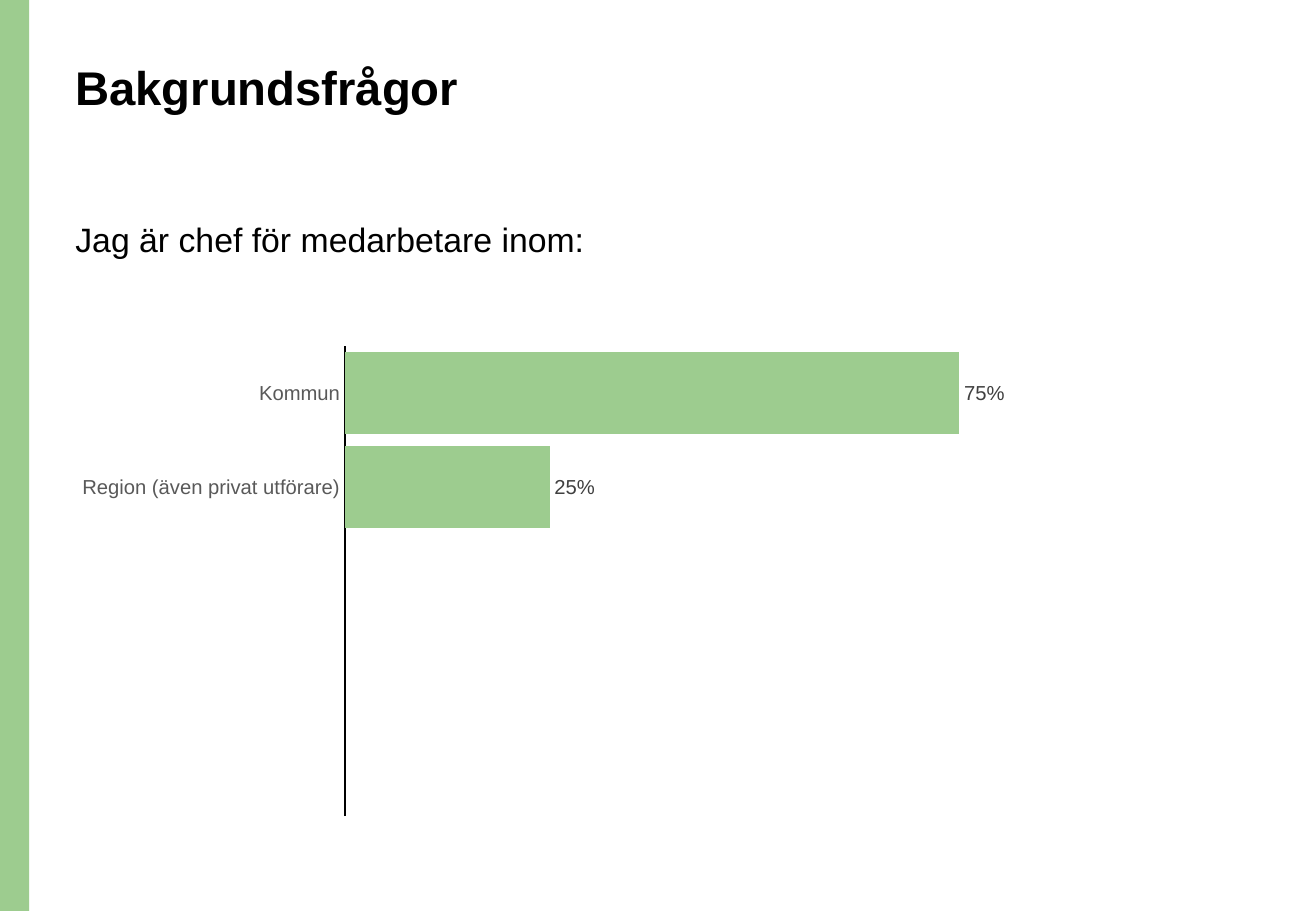
from lxml.etree import SubElement
from pptx import Presentation
from pptx.chart.data import CategoryChartData
from pptx.dml.color import RGBColor
from pptx.enum.chart import XL_CHART_TYPE, XL_LABEL_POSITION, XL_TICK_MARK
from pptx.enum.shapes import MSO_SHAPE
from pptx.enum.text import MSO_ANCHOR, MSO_AUTO_SIZE, PP_ALIGN
from pptx.oxml.ns import qn
from pptx.util import Pt

PX = 9144
GREEN = RGBColor(0x9D, 0xCC, 0x8F)
BLACK = RGBColor(0, 0, 0)
GREY = RGBColor(0x59, 0x59, 0x59)
DARK = RGBColor(0x40, 0x40, 0x40)


def scale(*box):
    """Turn px lengths into EMU."""
    return [side * PX for side in box]


def apply(item, form):
    """Set each format value on an item."""
    for name, value in form.items():
        setattr(item, name, value)


def style(font, size, color, bold=False):
    """Set the face, size and colour of a font."""
    apply(font, {"name": "Arial", "size": Pt(size), "bold": bold})
    font.color.rgb = color


def add_band(slide, box):
    """Draw the green band at the edge."""
    band = slide.shapes.add_shape(MSO_SHAPE.RECTANGLE, *scale(*box))
    band.shadow.inherit = False
    band.fill.solid()
    band.fill.fore_color.rgb = GREEN
    band.line.fill.background()


def fill_holder(holder, box, text, size, bold=False):
    """Place a text holder and write its plain line of text."""
    apply(holder, dict(zip(("left", "top", "width", "height"), scale(*box))))
    frame = holder.text_frame
    frame.text = text
    apply(frame, {"word_wrap": True, "auto_size": MSO_AUTO_SIZE.NONE,
                  "vertical_anchor": MSO_ANCHOR.TOP})
    line = frame.paragraphs[0]
    apply(line, {"alignment": PP_ALIGN.LEFT, "line_spacing": 0.9,
                 "space_before": Pt(0)})
    props = line._p.get_or_add_pPr()
    for name in ("marL", "indent"):
        props.set(name, "0")
    SubElement(props, qn("a:buNone"))
    style(line.runs[0].font, size, BLACK, bold)


def add_bars(slide, box, names, shares):
    """Add the bar chart of shares."""
    data = CategoryChartData(number_format="0%")
    data.categories = names
    data.add_series("Series 1", shares)
    chart = slide.shapes.add_chart(
        XL_CHART_TYPE.BAR_CLUSTERED, *scale(*box), data).chart
    apply(chart, {"has_legend": False, "has_title": False})
    style(chart.font, 10, BLACK)

    axis = chart.category_axis
    apply(axis, {"reverse_order": True, "has_major_gridlines": False,
                 "major_tick_mark": XL_TICK_MARK.NONE,
                 "minor_tick_mark": XL_TICK_MARK.NONE})
    style(axis.tick_labels.font, 12, GREY)
    axis.format.line.color.rgb = BLACK
    axis.format.line.width = Pt(0.75)
    apply(chart.value_axis, {"visible": False, "has_major_gridlines": False,
                             "minimum_scale": 0, "maximum_scale": 0.8})

    plot = chart.plots[0]
    apply(plot, {"gap_width": 15, "vary_by_categories": False})
    bars = plot.series[0]
    bars.format.fill.solid()
    bars.format.fill.fore_color.rgb = GREEN
    labels = bars.data_labels
    apply(labels, {"show_value": True, "number_format": "0%",
                   "number_format_is_linked": False,
                   "position": XL_LABEL_POSITION.OUTSIDE_END})
    style(labels.font, 12, DARK)


def main():
    """Build and save the slide."""
    deck = Presentation()
    apply(deck, {"slide_width": 1083 * PX, "slide_height": 750 * PX})
    slide = deck.slides.add_slide(deck.slide_layouts[1])
    title, body = slide.placeholders
    add_band(slide, (0, 0, 24, 750))
    fill_holder(title, (52, 48, 934, 102), "Bakgrundsfrågor", 28, True)
    fill_holder(body, (52, 179, 603, 74),
                "Jag är chef för medarbetare inom:", 20)
    add_bars(slide, (52, 277, 787, 403),
             ("Kommun", "Region (även privat utförare)", "", "", ""),
             (0.75, 0.25, None, None, None))
    deck.save("out.pptx")


if __name__ == "__main__":
    main()
